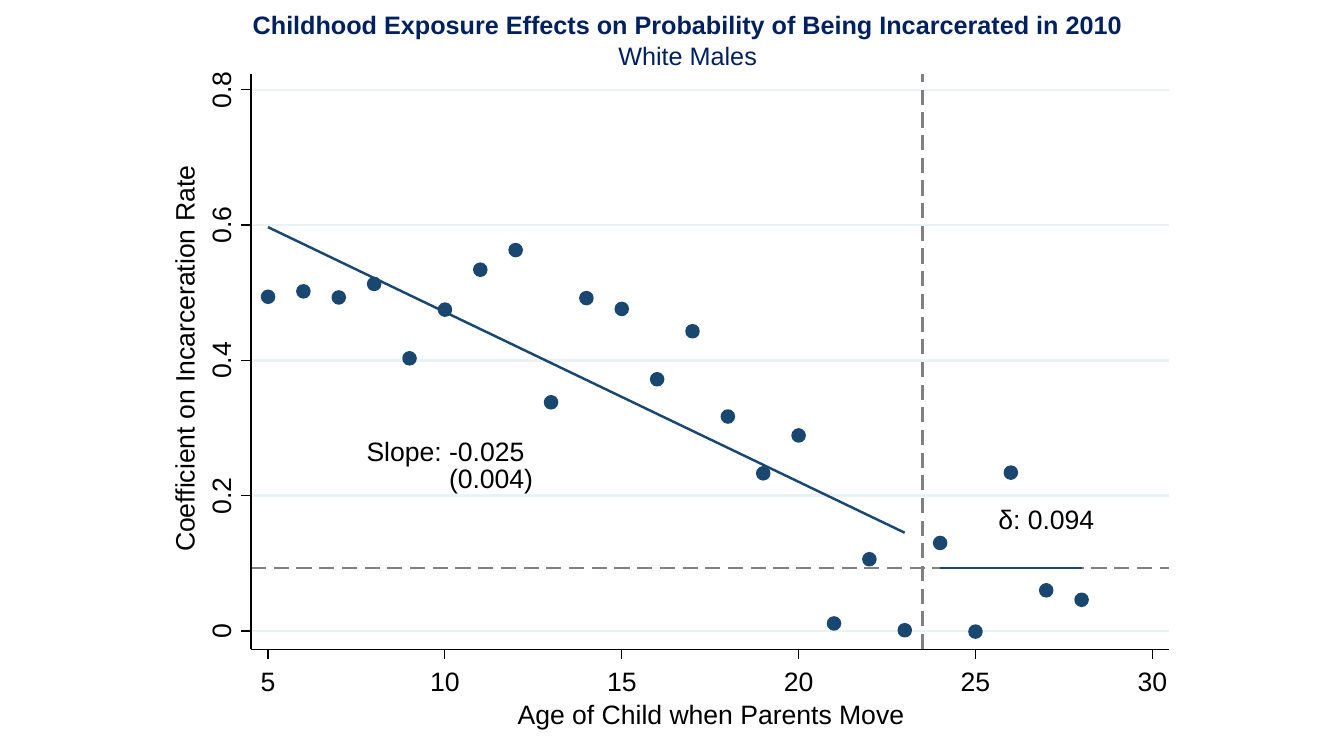
from dataclasses import dataclass

from lxml import etree
from pptx import Presentation
from pptx import util as u
from pptx.dml.color import RGBColor
from pptx.enum import shapes, text
from pptx.oxml.ns import qn
from pptx.slide import Slide

WIDTH, HEIGHT = u.Inches(13.33), u.Inches(7.5)
COLORS = {"title": "002060", "grid": "EAF2F3", "reference": "808080",
          "data": "1A476F", "ink": "000000"}
FONT = "Arial"
HEAVY, THIN = 1.75, 0.88

LEFT, RIGHT, TOP, BOTTOM = 18.68, 86.95, 9.73, 85.87
AGE_MIN, AGE_MAX = 4.52, 30.46
COEF_MIN, COEF_MAX = -0.027, 0.824
AGE_TICKS = range(5, 31, 5)
COEF_TICKS = [step / 5 for step in range(5)]
TICK_ACROSS, TICK_DOWN = 0.75, 1.33
DASH_ACROSS, PERIOD_ACROSS = 1.12, 1.69
DASH_DOWN, PERIOD_DOWN = 2, 3
DOT_ACROSS, DOT_DOWN = 0.9, 1.6
CUTOFF_AGE, DELTA = 23.5, 0.093

FIRST_AGE = 5
COEFFICIENTS = [0.494, 0.502, 0.493, 0.513, 0.403, 0.475, 0.534, 0.563,
                0.338, 0.492, 0.476, 0.372, 0.443, 0.317, 0.233, 0.289,
                0.011, 0.106, 0.001, 0.13, -0.001, 0.234, 0.06, 0.046]


@dataclass(frozen=True)
class Rule:
    x1: float
    y1: float
    x2: float
    y2: float
    color: str
    weight: float


@dataclass(frozen=True)
class Label:
    wording: str
    center_x: float
    center_y: float
    width: float = 3.5
    rotation: int = 0


@dataclass(frozen=True)
class Fit:
    first_age: int
    last_age: int
    start: float
    slope: float


FITS = [Fit(5, 23, 0.597, -0.0251), Fit(24, 28, DELTA, 0)]


def across(share: float) -> int:
    return int(WIDTH * share / 100)


def down(share: float) -> int:
    return int(HEIGHT * share / 100)


def age_x(age: float) -> float:
    return LEFT + (RIGHT - LEFT) * (age - AGE_MIN) / (AGE_MAX - AGE_MIN)


def coef_y(coef: float) -> float:
    return BOTTOM - (BOTTOM - TOP) * (coef - COEF_MIN) / (COEF_MAX - COEF_MIN)


def color(name: str) -> RGBColor:
    return RGBColor.from_string(COLORS[name])


def dash_spans(length: float, dash: float, period: float) -> list[tuple[float, float]]:
    count = int(length / period) + 1
    return [(i * period, min(i * period + dash, length)) for i in range(count)]


def draw_rule(slide: Slide, rule: Rule) -> None:
    connector = slide.shapes.add_connector(
        shapes.MSO_CONNECTOR.STRAIGHT, across(rule.x1), down(rule.y1),
        across(rule.x2), down(rule.y2))
    connector.line.color.rgb = color(rule.color)
    connector.line.width = u.Pt(rule.weight)
    etree.SubElement(connector.element.spPr, qn("a:effectLst"))


def draw_dot(slide: Slide, age: int, coef: float) -> None:
    dot = slide.shapes.add_shape(
        shapes.MSO_SHAPE.OVAL, across(age_x(age) - DOT_ACROSS / 2),
        down(coef_y(coef) - DOT_DOWN / 2), across(DOT_ACROSS), down(DOT_DOWN))
    dot.shadow.inherit = False
    dot.fill.solid()
    dot.fill.fore_color.rgb = color("data")
    dot.line.color.rgb = color("data")
    dot.line.width = u.Pt(HEAVY)


def draw_fit(slide: Slide, fit: Fit) -> None:
    start, *rest = [
        (across(age_x(age)),
         down(coef_y(fit.start + fit.slope * (age - fit.first_age))))
        for age in range(fit.first_age, fit.last_age + 1)]
    builder = slide.shapes.build_freeform(*start)
    builder.add_line_segments(rest, close=False)
    curve = builder.convert_to_shape()
    curve.shadow.inherit = False
    curve.fill.background()
    curve.line.color.rgb = color("data")
    curve.line.width = u.Pt(HEAVY)


def draw_label(slide: Slide, label: Label) -> None:
    height = 4.67
    box = slide.shapes.add_textbox(
        across(label.center_x - label.width / 2), down(label.center_y - height / 2),
        across(label.width), down(height))
    box.rotation = label.rotation
    frame = box.text_frame
    frame.margin_left = frame.margin_right = frame.margin_top = frame.margin_bottom = 0
    frame.word_wrap = False
    frame.vertical_anchor = text.MSO_ANCHOR.MIDDLE
    frame.text = label.wording
    paragraph = frame.paragraphs[0]
    paragraph.alignment = text.PP_ALIGN.CENTER
    font = paragraph.runs[0].font
    font.name, font.size = FONT, u.Pt(19)
    font.color.rgb = color("ink")


def draw_title(slide: Slide) -> None:
    title = slide.shapes.title
    title.left, title.top = across(13.65), down(1.73)
    title.width, title.height = across(75.02), down(7.07)
    frame = title.text_frame
    frame.text = ("Childhood Exposure Effects on Probability of Being Incarcerated in 2010\n"
                  "White Males")
    frame.word_wrap = True
    frame.auto_size = text.MSO_AUTO_SIZE.NONE
    frame.vertical_anchor = text.MSO_ANCHOR.MIDDLE
    for paragraph, bold in zip(frame.paragraphs, (True, False)):
        paragraph.alignment = text.PP_ALIGN.CENTER
        paragraph.space_before = u.Pt(0)
        font = paragraph.runs[0].font
        font.name, font.size, font.bold = FONT, u.Pt(18), bold
        font.color.rgb = color("title")


def main() -> None:
    deck = Presentation()
    deck.slide_width, deck.slide_height = WIDTH, HEIGHT
    slide = deck.slides.add_slide(deck.slide_layouts.get_by_name("Title Only"))
    draw_title(slide)

    cutoff, delta = age_x(CUTOFF_AGE), coef_y(DELTA)
    gridlines = [Rule(LEFT, coef_y(c), RIGHT, coef_y(c), "grid", HEAVY)
                 for c in COEF_TICKS]
    references = [
        Rule(cutoff, BOTTOM - start, cutoff, BOTTOM - end, "reference", HEAVY)
        for start, end in dash_spans(BOTTOM - TOP, DASH_DOWN, PERIOD_DOWN)]
    references += [
        Rule(LEFT + start, delta, LEFT + end, delta, "reference", HEAVY)
        for start, end in dash_spans(RIGHT - LEFT, DASH_ACROSS, PERIOD_ACROSS)]
    for rule in gridlines + references:
        draw_rule(slide, rule)

    for age, coef in enumerate(COEFFICIENTS, FIRST_AGE):
        draw_dot(slide, age, coef)
    for fit in FITS:
        draw_fit(slide, fit)

    axes = [Rule(LEFT, BOTTOM, LEFT, TOP, "ink", THIN),
            Rule(LEFT, BOTTOM, RIGHT, BOTTOM, "ink", THIN)]
    axes += [Rule(LEFT, coef_y(c), LEFT - TICK_ACROSS, coef_y(c), "ink", THIN)
             for c in COEF_TICKS]
    axes += [Rule(age_x(a), BOTTOM, age_x(a), BOTTOM + TICK_DOWN, "ink", THIN)
             for a in AGE_TICKS]
    for rule in axes:
        draw_rule(slide, rule)

    labels = [Label(f"{c:g}", 16.4, coef_y(c), rotation=270) for c in COEF_TICKS]
    labels += [Label(str(a), age_x(a), 90.07) for a in AGE_TICKS]
    labels += [
        Label("Slope: -0.025", 33.15, 59.67, 12.6),
        Label("(0.004)", 36.54, 63.27, 7),
        Label("δ: 0.094", 77.85, 68.67, 7.5),
        Label("Coefficient on Incarceration Rate", 13.7, 47.47, 29.6, 270),
        Label("Age of Child when Parents Move", 52.9, 94.47, 29.6),
    ]
    for label in labels:
        draw_label(slide, label)
    deck.save("out.pptx")


if __name__ == "__main__":
    main()
